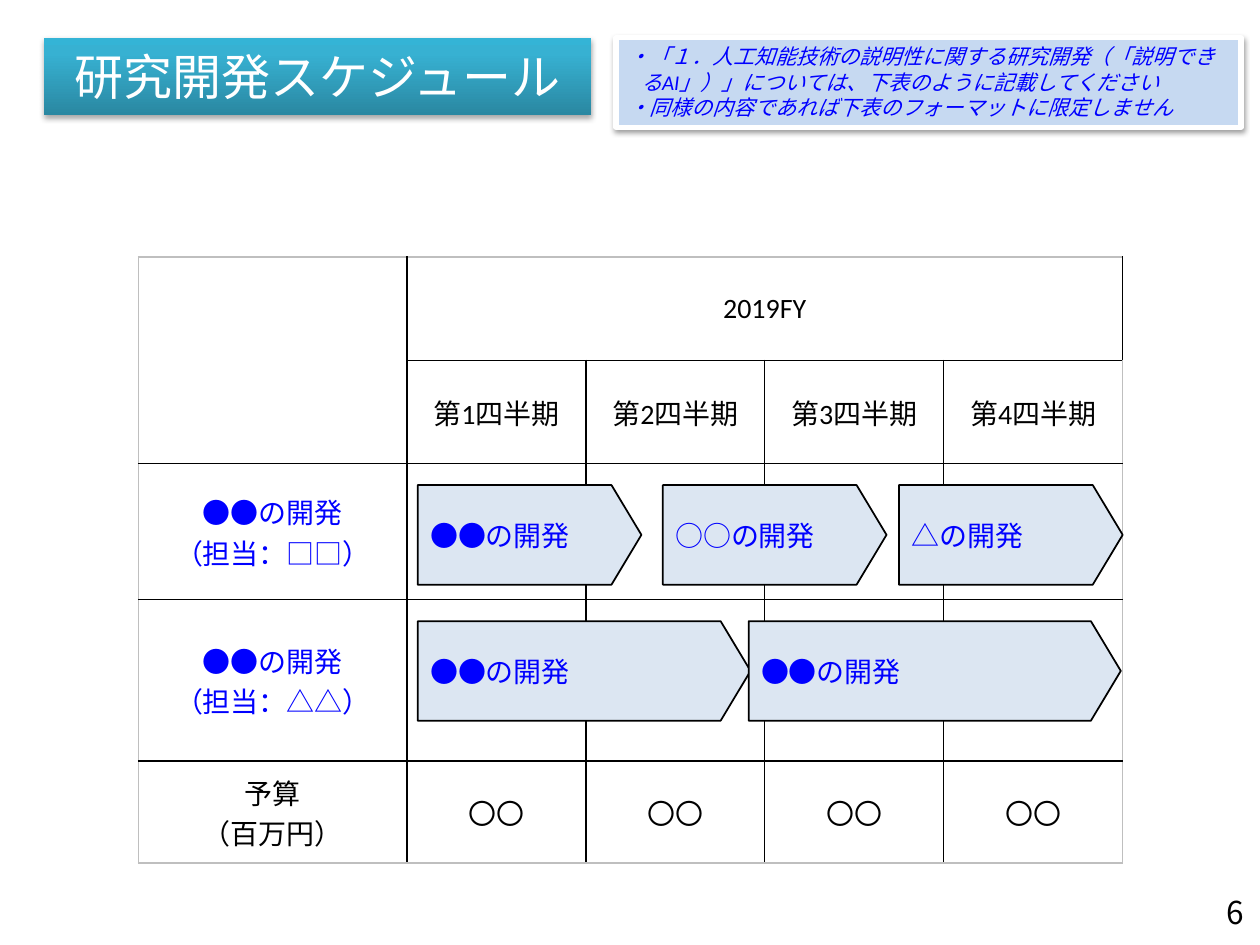
from lxml import etree
from pptx import Presentation
from pptx.dml.color import RGBColor
from pptx.enum.shapes import MSO_SHAPE
from pptx.enum.text import MSO_ANCHOR, MSO_AUTO_SIZE, PP_ALIGN
from pptx.oxml import parse_xml
from pptx.oxml.ns import qn
from pptx.util import Inches, Pt

BLACK = RGBColor(0x00, 0x00, 0x00)
WHITE = RGBColor(0xFF, 0xFF, 0xFF)
BLUE = RGBColor(0x00, 0x00, 0xFF)
GRAY = RGBColor(0xBF, 0xBF, 0xBF)
NOTE_FILL = RGBColor(0xC6, 0xD9, 0xF1)
BAR_FILL = RGBColor(0xDC, 0xE6, 0xF2)
TITLE_STOPS = (
    (0, RGBColor(0x2A, 0x88, 0xA2)),
    (80, RGBColor(0x37, 0xB1, 0xD2)),
    (100, RGBColor(0x34, 0xB4, 0xD6)),
)
RECTANGLE, PENTAGON = MSO_SHAPE.RECTANGLE, MSO_SHAPE.PENTAGON
LEFT, CENTER, RIGHT = PP_ALIGN.LEFT, PP_ALIGN.CENTER, PP_ALIGN.RIGHT
TOP, MIDDLE = MSO_ANCHOR.TOP, MSO_ANCHOR.MIDDLE
NO_AUTOFIT = MSO_AUTO_SIZE.NONE

LATIN, JAPANESE = "Calibri", "Noto Sans CJK JP"
DRAWING = "http://schemas.openxmlformats.org/drawingml/2006/main"
TABLE_LEFT, TABLE_TOP = 1.1, 2.04
LABEL_WIDTH, QUARTER_WIDTH = 2.13, 1.42
ROW_HEIGHTS = (0.82, 0.82, 1.08, 1.28, 0.81)
QUARTERS = 4
TASK_ROW = 2
BAR_GAP, BAR_HEIGHT = 0.17, 0.79
TASK_LABELS = ("●●の開発\n（担当：□□）", "●●の開発\n（担当：△△）")
TASK_BARS = (
    ((0.06, 1.25, "●●の開発"), (1.43, 1.25, "○○の開発"), (2.75, 1.25, "△の開発")),
    ((0.06, 1.86, "●●の開発"), (1.91, 2.08, "●●の開発")),
)
NOTES = (
    "・「１．人工知能技術の説明性に関する研究開発（「説明できるAI」）」については、下表のように記載してください\n"
    "・同様の内容であれば下表のフォーマットに限定しません"
)


def write_text(frame, text, size=16, color=BLACK, font=LATIN, align=CENTER,
               anchor=MIDDLE, italic=False, hanging=0):
    """Write newline-separated paragraphs with one format into a text frame."""
    frame.vertical_anchor = anchor
    for index, line in enumerate(text.split("\n")):
        paragraph = frame.paragraphs[0] if index == 0 else frame.add_paragraph()
        paragraph.alignment = align
        if hanging:
            properties = paragraph._p.get_or_add_pPr()
            properties.set("marL", str(Inches(hanging)))
            properties.set("indent", str(-Inches(hanging)))
        run = paragraph.add_run()
        run.text = line
        run.font.size = Pt(size)
        run.font.name = font
        run.font.italic = italic
        run.font.color.rgb = color
        east_asian = etree.SubElement(run._r.get_or_add_rPr(), qn("a:ea"))
        east_asian.set("typeface", JAPANESE)


def add_shadow(shape, opacity, blur, distance):
    """Give a shape a black shadow that falls straight down."""
    shape._element.spPr.append(parse_xml(
        f'<a:effectLst xmlns:a="{DRAWING}"><a:outerShdw blurRad="{Pt(blur)}" '
        f'dist="{Pt(distance)}" dir="5400000" rotWithShape="0"><a:srgbClr val="{BLACK}">'
        f'<a:alpha val="{opacity * 1000}"/></a:srgbClr></a:outerShdw></a:effectLst>'))


def add_box(slide, kind, box, fill, line, line_width):
    """Add a filled, outlined shape without the theme's shadow."""
    shape = slide.shapes.add_shape(kind, *map(Inches, box))
    shape.fill.solid()
    shape.fill.fore_color.rgb = fill
    shape.line.color.rgb = line
    shape.line.width = Pt(line_width)
    shape.text_frame.word_wrap = True
    return shape


def place_title(slide, box):
    """Format the title placeholder as a gradient banner."""
    title = slide.shapes.title
    title.left, title.top, title.width, title.height = map(Inches, box)
    stops = "".join(
        f'<a:gs pos="{position * 1000}"><a:srgbClr val="{color}"/></a:gs>'
        for position, color in TITLE_STOPS)
    title._element.spPr.append(parse_xml(
        f'<a:gradFill xmlns:a="{DRAWING}" rotWithShape="1"><a:gsLst>{stops}</a:gsLst>'
        '<a:lin ang="16200000" scaled="0"/></a:gradFill>'))
    add_shadow(title, 35, 3.1, 1.8)
    title.text_frame.auto_size = NO_AUTOFIT
    write_text(title.text_frame, "研究開発スケジュール", size=28, color=WHITE)


def place_notes(slide, box):
    """Add the panel of instructions."""
    panel = add_box(slide, RECTANGLE, box, NOTE_FILL, WHITE, 3)
    add_shadow(panel, 38, 3.1, 1.6)
    write_text(panel.text_frame, NOTES, size=12, color=BLUE, align=LEFT,
               anchor=TOP, italic=True, hanging=0.1)


def format_cell(cell, edges):
    """Clear a cell's fill and margins and draw its four borders."""
    cell.margin_left = cell.margin_right = cell.margin_top = cell.margin_bottom = 0
    properties = cell._tc.get_or_add_tcPr()
    for side, is_outer in zip("LRTB", edges):
        color = GRAY if is_outer else BLACK
        properties.append(parse_xml(
            f'<a:ln{side} xmlns:a="{DRAWING}" w="{Pt(1)}"><a:solidFill>'
            f'<a:srgbClr val="{color}"/></a:solidFill></a:ln{side}>'))
    cell.fill.background()


def place_schedule(slide, left, top):
    """Add the schedule table with its quarters, tasks and budget."""
    widths = (LABEL_WIDTH,) + (QUARTER_WIDTH,) * QUARTERS
    last_row, last_column = len(ROW_HEIGHTS) - 1, QUARTERS
    table = slide.shapes.add_table(
        len(ROW_HEIGHTS), len(widths), Inches(left), Inches(top),
        Inches(sum(widths)), Inches(sum(ROW_HEIGHTS))).table
    table.first_row = table.horz_banding = False
    for column, width in zip(table.columns, widths):
        column.width = Inches(width)
    for row, height in enumerate(ROW_HEIGHTS):
        table.rows[row].height = Inches(height)
        for column in range(len(widths)):
            format_cell(table.cell(row, column),
                        (column == 0, column == last_column, row == 0, row == last_row))
    table.cell(0, 0).merge(table.cell(1, 0))
    table.cell(0, 1).merge(table.cell(0, last_column))

    def fill_cell(row, column, text, **text_format):
        """Write one cell and centre it vertically."""
        cell = table.cell(row, column)
        write_text(cell.text_frame, text, **text_format)
        cell.vertical_anchor = MIDDLE

    fill_cell(0, 1, "2019FY")
    for quarter in range(1, QUARTERS + 1):
        fill_cell(1, quarter, f"第{quarter}四半期")
        fill_cell(last_row, quarter, "〇〇", font=JAPANESE)
    for row, label in enumerate(TASK_LABELS, TASK_ROW):
        fill_cell(row, 0, label, color=BLUE, font=JAPANESE)
    fill_cell(last_row, 0, "予算\n（百万円）", font=JAPANESE)


def place_bars(slide, left, top):
    """Add task arrows, with start and length counted in quarters."""
    for row, bars in enumerate(TASK_BARS, TASK_ROW):
        bar_top = top + sum(ROW_HEIGHTS[:row]) + BAR_GAP
        for start, length, label in bars:
            box = (left + LABEL_WIDTH + start * QUARTER_WIDTH, bar_top,
                   length * QUARTER_WIDTH, BAR_HEIGHT)
            bar = add_box(slide, PENTAGON, box, BAR_FILL, BLACK, 1)
            bar.shadow.inherit = False
            bar.adjustments[0] = 0.3
            write_text(bar.text_frame, label, color=BLUE, align=LEFT, hanging=0.1)


def place_page_number(slide, box):
    """Add the page number, aligned right."""
    frame = slide.shapes.add_textbox(*map(Inches, box)).text_frame
    frame.margin_left = frame.margin_right = frame.margin_top = frame.margin_bottom = 0
    frame.word_wrap = False
    write_text(frame, "6", size=18, font=JAPANESE, align=RIGHT)


def main():
    """Build and save the schedule slide."""
    presentation = Presentation()
    presentation.slide_width, presentation.slide_height = Inches(10), Inches(7.5)
    slide = presentation.slides.add_slide(presentation.slide_layouts[5])
    place_title(slide, (0.35, 0.3, 4.34, 0.61))
    place_notes(slide, (4.89, 0.3, 4.96, 0.71))
    place_schedule(slide, TABLE_LEFT, TABLE_TOP)
    place_bars(slide, TABLE_LEFT, TABLE_TOP)
    place_page_number(slide, (9.29, 7.11, 0.58, 0.25))
    presentation.save("out.pptx")


if __name__ == "__main__":
    main()
